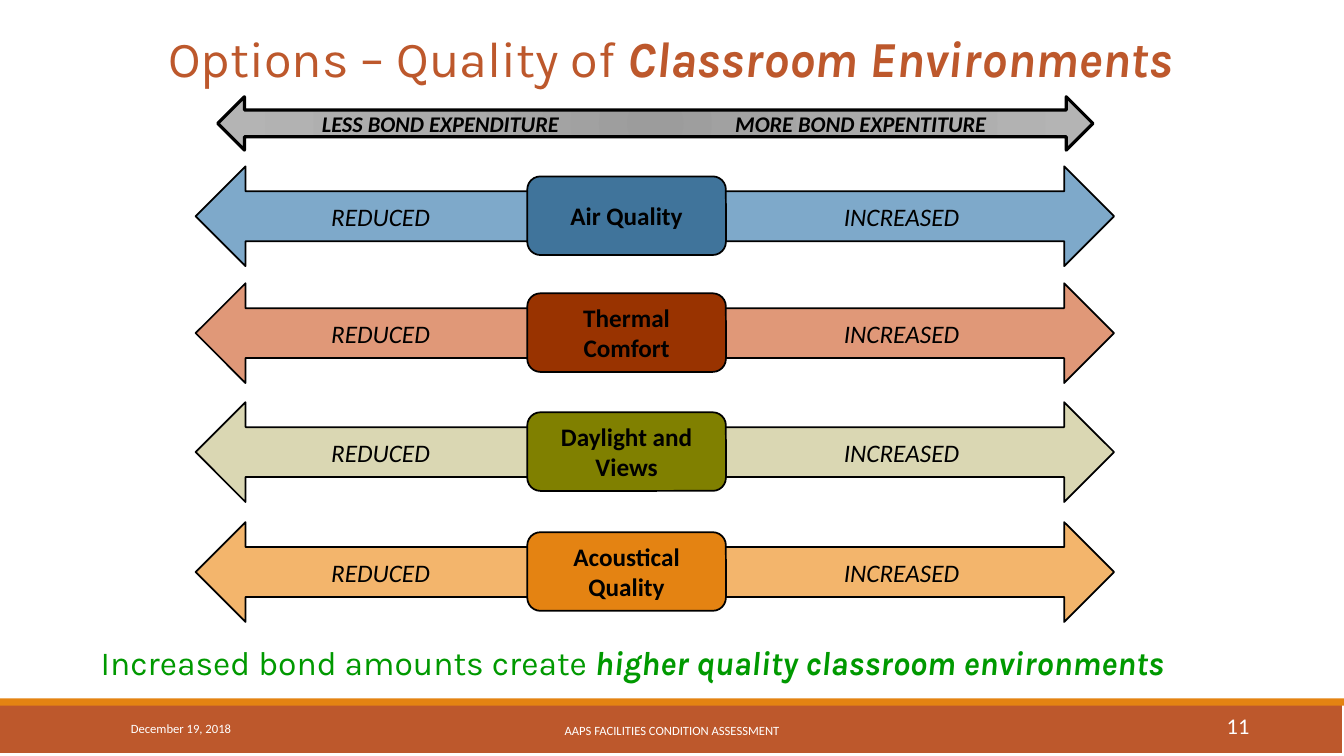
from lxml import etree
from pptx import Presentation
from pptx.dml.color import RGBColor
from pptx.enum.shapes import MSO_SHAPE
from pptx.enum.text import MSO_ANCHOR, MSO_AUTO_SIZE, PP_ALIGN
from pptx.oxml.ns import qn
from pptx.util import Inches, Pt

LEFT, CENTER, RIGHT = PP_ALIGN.LEFT, PP_ALIGN.CENTER, PP_ALIGN.RIGHT
TOP, MIDDLE = MSO_ANCHOR.TOP, MSO_ANCHOR.MIDDLE
GROW = MSO_AUTO_SIZE.SHAPE_TO_FIT_TEXT
RECTANGLE, ROUNDED = MSO_SHAPE.RECTANGLE, MSO_SHAPE.ROUNDED_RECTANGLE
LEFT_ARROW, RIGHT_ARROW = MSO_SHAPE.LEFT_ARROW, MSO_SHAPE.RIGHT_ARROW
DOUBLE_ARROW = MSO_SHAPE.LEFT_RIGHT_ARROW

COLORS = {
    "rust": "BD582C", "orange": "E48312", "green": "009900",
    "white": "FFFFFF", "black": "000000",
    "air": "40749B", "air_light": "7EA9CA",
    "thermal": "993300", "thermal_light": "E09878",
    "daylight": "808000", "daylight_light": "DAD7B3",
    "acoustic": "E48312", "acoustic_light": "F3B56C",
}
BOND_GRADIENT = [(0, "9C9C9C"), (45, "AAAAAA"), (100, "B4B4B4")]
QUALITIES = [
    (1.65, "Air Quality", "air"),
    (2.81, "Thermal Comfort", "thermal"),
    (3.99, "Daylight and Views", "daylight"),
    (5.18, "Acoustical Quality", "acoustic"),
]


class SlideBuilder:
    """Draws styled elements on the current slide."""

    def __init__(self, slide, body_font="Calibri", heading_font="Karla"):
        self.slide = slide
        self.body_font = body_font
        self.heading_font = heading_font

    def add_runs(self, shape, runs, size, color, font=None, align=CENTER, anchor=MIDDLE):
        frame = shape.text_frame
        frame.word_wrap = True
        frame.vertical_anchor = anchor
        paragraph = frame.paragraphs[0]
        paragraph.alignment = align
        for text, style in runs:
            run = paragraph.add_run()
            run.text = text
            run.font.name = font or self.body_font
            run.font.size = Pt(size)
            run.font.color.rgb = RGBColor.from_string(COLORS[color])
            run.font.bold = "b" in style
            run.font.italic = "i" in style
        return paragraph

    def text(self, box, runs, size, color, **options):
        shape = self.slide.shapes.add_textbox(*map(Inches, box))
        return shape, self.add_runs(shape, runs, size, color, **options)

    def shape(self, kind, box, fill, line_width=0):
        shape = self.slide.shapes.add_shape(kind, *map(Inches, box))
        shape.shadow.inherit = False
        shape.fill.solid()
        shape.fill.fore_color.rgb = RGBColor.from_string(COLORS[fill])
        if line_width:
            shape.line.color.rgb = RGBColor.from_string(COLORS["black"])
            shape.line.width = Pt(line_width)
        else:
            shape.line.fill.background()
        return shape

    def label_shape(self, kind, box, fill, label, style):
        shape = self.shape(kind, box, fill, 1.25)
        self.add_runs(shape, [(label, style)], 18, "black")

    def quality_row(self, top, label, color):
        light = f"{color}_light"
        self.label_shape(LEFT_ARROW, (1.94, top, 3.42, 0.99), light, "REDUCED", "i")
        self.label_shape(RIGHT_ARROW, (7.08, top, 3.97, 0.99), light, "INCREASED", "i")
        self.label_shape(ROUNDED, (5.23, top + 0.1, 1.97, 0.78), color, label, "b")

    def radial_fill(self, shape, stops):
        gradient = etree.Element(qn("a:gradFill"), rotWithShape="1")
        stop_list = etree.SubElement(gradient, qn("a:gsLst"))
        for position, color in stops:
            stop = etree.SubElement(stop_list, qn("a:gs"), pos=str(position * 1000))
            etree.SubElement(stop, qn("a:srgbClr"), val=color)
        circle = etree.SubElement(gradient, qn("a:path"), attrib={"path": "circle"})
        etree.SubElement(circle, qn("a:fillToRect"), dict.fromkeys("ltrb", "50000"))
        properties = shape.element.spPr
        properties.replace(properties.find(qn("a:solidFill")), gradient)

    def bond_arrow(self, box, less, more):
        shape = self.shape(DOUBLE_ARROW, box, "white", 2.25)
        self.radial_fill(shape, BOND_GRADIENT)
        shape.text_frame.margin_left = Inches(0.9)
        shape.text_frame.margin_right = 0
        paragraph = self.add_runs(shape, [(f"{less}\t{more}", "bi")], 16, "black", align=LEFT)
        properties = paragraph._p.get_or_add_pPr()
        tabs = etree.SubElement(properties, qn("a:tabLst"))
        etree.SubElement(tabs, qn("a:tab"), pos=str(Inches(4.1)), algn="l")


def main():
    presentation = Presentation()
    presentation.slide_width = Inches(13.33)
    presentation.slide_height = Inches(7.5)
    builder = SlideBuilder(presentation.slides.add_slide(presentation.slide_layouts[6]))

    builder.shape(RECTANGLE, (-0.02, 6.97, 13.33, 0.5), "rust")
    builder.shape(RECTANGLE, (0, 6.93, 13.33, 0.07), "orange")

    title_runs = [("Options – Quality of ", ""), ("Classroom Environments", "bi")]
    _, title = builder.text((0.15, 0.22, 13, 0.8), title_runs, 36, "rust",
                            font=builder.heading_font)
    title.line_spacing = 0.85

    for box, label, size, align in [
        ((1.2, 7.03, 2.7, 0.4), "December 19, 2018", 9, LEFT),
        ((4.03, 7.05, 5.27, 0.4), "AAPS FACILITIES CONDITION ASSESSMENT", 9, CENTER),
        ((11.06, 7, 1.43, 0.4), "11", 16, RIGHT),
    ]:
        builder.text(box, [(label, "")], size, "white", align=align)

    summary_runs = [("Increased bond amounts create", ""),
                    (" higher quality classroom environments", "bi")]
    summary, _ = builder.text((0.9, 6.32, 11.94, 0.5), summary_runs, 24, "green",
                              font=builder.heading_font, align=LEFT, anchor=TOP)
    summary.text_frame.auto_size = GROW

    for top, label, color in QUALITIES:
        builder.quality_row(top, label, color)
    builder.bond_arrow((2.16, 0.96, 8.68, 0.53),
                       "LESS BOND EXPENDITURE", "MORE BOND EXPENTITURE")

    presentation.save("out.pptx")


if __name__ == "__main__":
    main()
